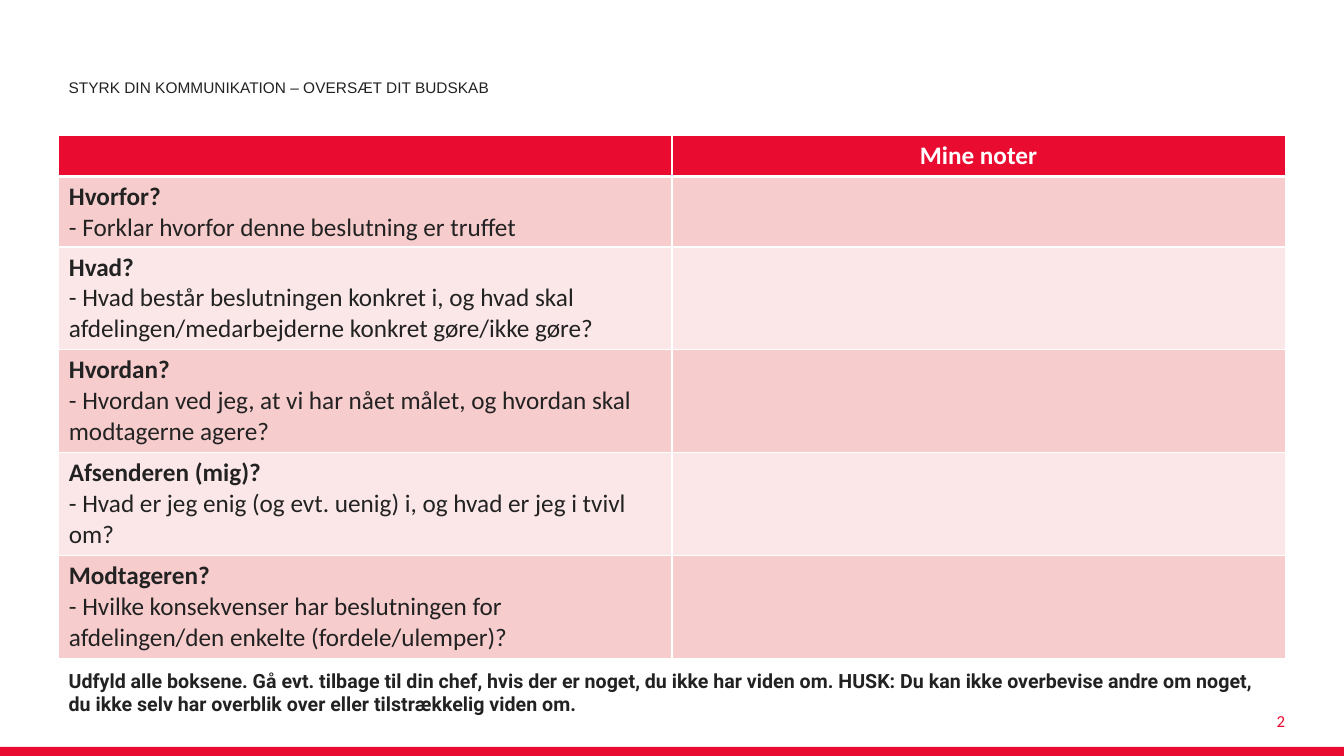
from lxml import etree
from pptx import Presentation
from pptx.dml.color import RGBColor
from pptx.enum.shapes import MSO_SHAPE
from pptx.enum.text import MSO_ANCHOR, PP_ALIGN
from pptx.oxml.ns import qn
from pptx.util import Inches, Pt

RECTANGLE = MSO_SHAPE.RECTANGLE
TOP, MIDDLE, BOTTOM = MSO_ANCHOR.TOP, MSO_ANCHOR.MIDDLE, MSO_ANCHOR.BOTTOM
LEFT, CENTER, RIGHT = PP_ALIGN.LEFT, PP_ALIGN.CENTER, PP_ALIGN.RIGHT

GRID_COLUMNS, GRID_ROWS = 160, 90
MARGIN, CONTENT_WIDTH = 7, 146

QUESTIONS = [
    ("Hvorfor?", "- Forklar hvorfor denne beslutning er truffet"),
    ("Hvad?", "- Hvad består beslutningen konkret i, og hvad skal "
              "afdelingen/medarbejderne konkret gøre/ikke gøre?"),
    ("Hvordan?", "- Hvordan ved jeg, at vi har nået målet, og hvordan skal "
                 "modtagerne agere?"),
    ("Afsenderen (mig)?", "- Hvad er jeg enig (og evt. uenig) i, og hvad er jeg "
                          "i tvivl om?"),
    ("Modtageren?", "- Hvilke konsekvenser har beslutningen for "
                    "afdelingen/den enkelte (fordele/ulemper)?"),
]
QUESTION_HEIGHTS = [8.4] + [12.25] * 4
HEADER_HEIGHT = 4.9
REMINDER = ("Udfyld alle boksene. Gå evt. tilbage til din chef, hvis der er noget, "
            "du ikke har viden om. HUSK: Du kan ikke overbevise andre om noget, "
            "du ikke selv har overblik over eller tilstrækkelig viden om.")


def color(hex_value):
    return RGBColor.from_string(hex_value)


def add_text(paragraph, text, *, size, font, fill, bold=False, align=LEFT):
    paragraph.alignment = align
    run = paragraph.add_run()
    run.text = text
    run.font.size = Pt(size)
    run.font.name = font
    run.font.bold = bold
    run.font.color.rgb = color(fill)


def add_borders(cell, hex_value, **widths):
    """Draw cell borders; widths in points are keyed by L, R, T and B."""
    properties = cell._tc.get_or_add_tcPr()
    for side, width in widths.items():
        line = etree.SubElement(properties, qn(f"a:ln{side}"), w=str(Pt(width)))
        solid = etree.SubElement(line, qn("a:solidFill"))
        etree.SubElement(solid, qn("a:srgbClr"), val=hex_value)


class WorksheetSlide:
    red, ink, white = "E90C30", "222222", "FFFFFF"
    bands = ("F7CCCD", "FBE7E8")

    def __init__(self, presentation):
        self.slide = presentation.slides.add_slide(presentation.slide_layouts[6])
        self.column = presentation.slide_width / GRID_COLUMNS
        self.row = presentation.slide_height / GRID_ROWS

    def place(self, left, top, width, height):
        """Turn grid columns and rows into slide lengths."""
        return (round(left * self.column), round(top * self.row),
                round(width * self.column), round(height * self.row))

    def bar(self, *area):
        shape = self.slide.shapes.add_shape(RECTANGLE, *self.place(*area))
        shape.shadow.inherit = False
        shape.fill.solid()
        shape.fill.fore_color.rgb = color(self.red)
        shape.line.fill.background()

    def text_box(self, text, *area, anchor=BOTTOM, right_inset=0.1,
                 line_spacing=1.0, **text_format):
        frame = self.slide.shapes.add_textbox(*self.place(*area)).text_frame
        frame.word_wrap = True
        frame.vertical_anchor = anchor
        frame.margin_right = Inches(right_inset)
        frame.paragraphs[0].line_spacing = line_spacing
        add_text(frame.paragraphs[0], text, **text_format)

    def style_cell(self, cell, fill, bottom_border=1):
        add_borders(cell, self.white, L=1, R=1, T=1, B=bottom_border)
        cell.fill.solid()
        cell.fill.fore_color.rgb = color(fill)
        cell.vertical_anchor = TOP
        cell.text_frame.paragraphs[0].font.size = Pt(18)

    def question_table(self, top, note_heading, questions, heights):
        area = self.place(MARGIN, top, CONTENT_WIDTH, sum(heights))
        table = self.slide.shapes.add_table(len(heights), 2, *area).table
        table.horz_banding = False
        for table_row, height in zip(table.rows, heights):
            table_row.height = round(height * self.row)

        for cell in table.rows[0].cells:
            self.style_cell(cell, self.red, bottom_border=3)
        add_text(table.cell(0, 1).text_frame.paragraphs[0], note_heading, size=18,
                 font="Calibri", fill=self.white, bold=True, align=CENTER)

        for index, (question, guidance) in enumerate(questions):
            row = index + 1
            for cell in table.rows[row].cells:
                self.style_cell(cell, self.bands[index % 2])
            paragraph = table.cell(row, 0).text_frame.paragraphs[0]
            body = dict(size=18, font="Calibri", fill=self.ink)
            add_text(paragraph, question, bold=True, **body)
            paragraph.add_line_break()
            add_text(paragraph, guidance, **body)


def main():
    presentation = Presentation()
    presentation.slide_width = Inches(13.33)
    presentation.slide_height = Inches(7.5)

    sheet = WorksheetSlide(presentation)
    sheet.bar(0, 88.9, GRID_COLUMNS, 1.1)
    sheet.text_box(REMINDER, MARGIN, 77.4, CONTENT_WIDTH, 8.4,
                   size=14, font="Roboto", fill=sheet.ink, bold=True)
    sheet.question_table(16.1, "Mine noter", QUESTIONS,
                         [HEADER_HEIGHT] + QUESTION_HEIGHTS)
    sheet.text_box("2", 117, 83.4, 36, 4.8, anchor=MIDDLE, right_inset=0,
                   size=12, font="Calibri", fill=sheet.red, align=RIGHT)
    sheet.text_box("STYRK DIN KOMMUNIKATION – OVERSÆT DIT BUDSKAB",
                   MARGIN, 8.5, 127.6, 3.6, line_spacing=0.9,
                   size=11, font="Arial", fill=sheet.ink)
    presentation.save("out.pptx")


if __name__ == "__main__":
    main()
